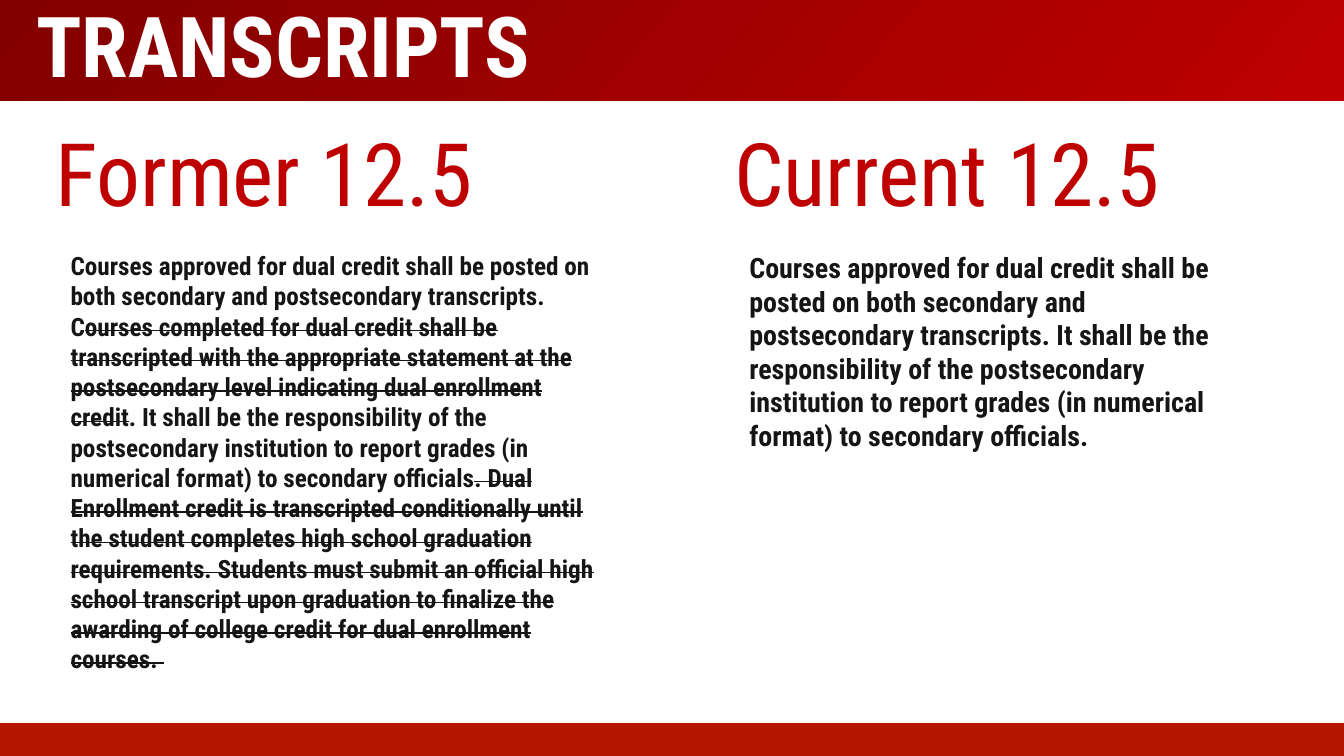
"""Build the slide comparing the former and current transcript rules."""
from dataclasses import dataclass

import pptx
import pptx.dml.color
import pptx.enum.shapes
import pptx.enum.text
import pptx.util

WIDTH, HEIGHT = 26.67, 15
FONT = "Roboto Condensed"
COLORS = {"white": "FFFFFF", "footer": "B41600", "dark": "7F0000",
          "bright": "C00000", "heading": "BF0000", "body": "151515"}
COLUMN_LEFT, COLUMN_STEP = 1.04, 13.47
HEADING_TOP, HEADING_SIZE = 2.29, (9, 2.22)
PANEL_TOP, PANEL_SIZE = 4.61, (11.12, 9.05)
PANEL_PADDING = 0.3
BANNER_POINTS = [(27.83, -1.22), (27.83, 1.72), (-1.17, 2.38),
                 (-1.17, -0.08), (27.83, -0.08)]
Anchor = pptx.enum.text.MSO_ANCHOR
AutoSize = pptx.enum.text.MSO_AUTO_SIZE


@dataclass(frozen=True)
class Box:
    """A rectangle in inches."""
    left: float
    top: float
    width: float
    height: float

    def lengths(self) -> list:
        """Return the four lengths for python-pptx."""
        return [pptx.util.Inches(value) for value in
                (self.left, self.top, self.width, self.height)]


@dataclass(frozen=True)
class Run:
    """A piece of text, struck through or not."""
    text: str
    struck: bool = False


@dataclass(frozen=True)
class Style:
    """The look of the text in one box."""
    size: float
    color: str
    bold: bool = False
    anchor: Anchor = Anchor.TOP
    auto_size: AutoSize = AutoSize.NONE
    insets: tuple = (0.06, 0.06)


@dataclass(frozen=True)
class Version:
    """One version of the rule, shown in a column."""
    column: int
    heading: str
    size: float
    paragraphs: list


TITLE_STYLE = Style(120, "white", bold=True, insets=(0.1, 0.05))
HEADING_STYLE = Style(125, "heading", anchor=Anchor.MIDDLE,
                      auto_size=AutoSize.SHAPE_TO_FIT_TEXT)
VERSIONS = [
    Version(0, "Former 12.5", 36, [[
        Run("Courses approved for dual credit shall be posted on both secondary "
            "and postsecondary transcripts. C"),
        Run("ourses completed for dual credit shall be transcripted with the "
            "appropriate statement at the postsecondary level indicating dual "
            "enrollment credit", True),
        Run(". It shall be the responsibility of the postsecondary institution "
            "to report grades (in numerical format) to secondary officials"),
        Run(". Dual Enrollment credit is transcripted conditionally until the "
            "student completes high school graduation requirements. Students "
            "must submit an official high school transcript upon graduation to "
            "finalize the awarding of college credit for dual enrollment "
            "courses. ", True)]]),
    Version(1, "Current 12.5", 40, [
        [Run("Courses approved for dual credit shall be posted on both "
             "secondary and")],
        [Run("postsecondary transcripts. It shall be the responsibility of the "
             "postsecondary")],
        [Run("institution to report grades (in numerical format) to secondary "
             "officials.")]]),
]


def rgb(name: str) -> pptx.dml.color.RGBColor:
    """Look up a named colour."""
    return pptx.dml.color.RGBColor.from_string(COLORS[name])


def write(shape, paragraphs: list, style: Style) -> None:
    """Fill a shape with styled paragraphs."""
    frame = shape.text_frame
    across, down = (pptx.util.Inches(inset) for inset in style.insets)
    frame_format = {"word_wrap": True, "auto_size": style.auto_size,
                    "vertical_anchor": style.anchor,
                    "margin_left": across, "margin_right": across,
                    "margin_top": down, "margin_bottom": down}
    for name, value in frame_format.items():
        setattr(frame, name, value)
    font_format = {"name": FONT, "size": pptx.util.Pt(style.size),
                   "bold": style.bold}
    for index, runs in enumerate(paragraphs):
        paragraph = frame.add_paragraph() if index else frame.paragraphs[0]
        paragraph.alignment = pptx.enum.text.PP_ALIGN.LEFT
        for piece in runs:
            run = paragraph.add_run()
            run.text = piece.text
            for name, value in font_format.items():
                setattr(run.font, name, value)
            run.font.color.rgb = rgb(style.color)
            if piece.struck:
                run._r.get_or_add_rPr().set("strike", "sngStrike")


def add_rectangle(slide, box: Box, color: str) -> None:
    """Draw a plain filled rectangle."""
    shape = slide.shapes.add_shape(
        pptx.enum.shapes.MSO_SHAPE.RECTANGLE, *box.lengths())
    shape.shadow.inherit = False
    shape.fill.solid()
    shape.fill.fore_color.rgb = rgb(color)
    shape.line.fill.background()


def add_banner(slide) -> None:
    """Draw the slanted gradient band behind the title."""
    builder = slide.shapes.build_freeform(
        *BANNER_POINTS[0], scale=pptx.util.Inches(1))
    builder.add_line_segments(BANNER_POINTS[1:], close=True)
    banner = builder.convert_to_shape()
    banner.shadow.inherit = False
    banner.line.fill.background()
    banner.fill.gradient()
    banner.fill.gradient_angle = 320
    for stop, color in zip(banner.fill.gradient_stops, ("dark", "bright")):
        stop.color.rgb = rgb(color)


def add_title(slide, text: str) -> None:
    """Place the title in front of the banner."""
    title = slide.shapes.title
    slide.shapes.element.append(title.element)
    lengths = Box(0.62, -0.17, 23, 1.67).lengths()
    for name, value in zip(("left", "top", "width", "height"), lengths):
        setattr(title, name, value)
    write(title, [[Run(text)]], TITLE_STYLE)


def add_version(slide, version: Version) -> None:
    """Draw the panel, heading and rule text of one column."""
    left = COLUMN_LEFT + version.column * COLUMN_STEP
    width, height = PANEL_SIZE
    add_rectangle(slide, Box(left, PANEL_TOP, width, height), "white")
    heading = slide.shapes.add_textbox(
        *Box(left, HEADING_TOP, *HEADING_SIZE).lengths())
    write(heading, [[Run(version.heading)]], HEADING_STYLE)
    body = slide.shapes.add_textbox(*Box(
        left + PANEL_PADDING, PANEL_TOP + PANEL_PADDING,
        width - 2 * PANEL_PADDING, height - 2 * PANEL_PADDING).lengths())
    write(body, version.paragraphs, Style(version.size, "body", bold=True))


def main() -> None:
    """Build and save the presentation."""
    presentation = pptx.Presentation()
    presentation.slide_width = pptx.util.Inches(WIDTH)
    presentation.slide_height = pptx.util.Inches(HEIGHT)
    slide = presentation.slides.add_slide(presentation.slide_layouts[5])
    add_rectangle(slide, Box(0, HEIGHT - 0.65, WIDTH, 0.65), "footer")
    add_banner(slide)
    add_title(slide, "TRANSCRIPTS")
    for version in VERSIONS:
        add_version(slide, version)
    presentation.save("out.pptx")


if __name__ == "__main__":
    main()
